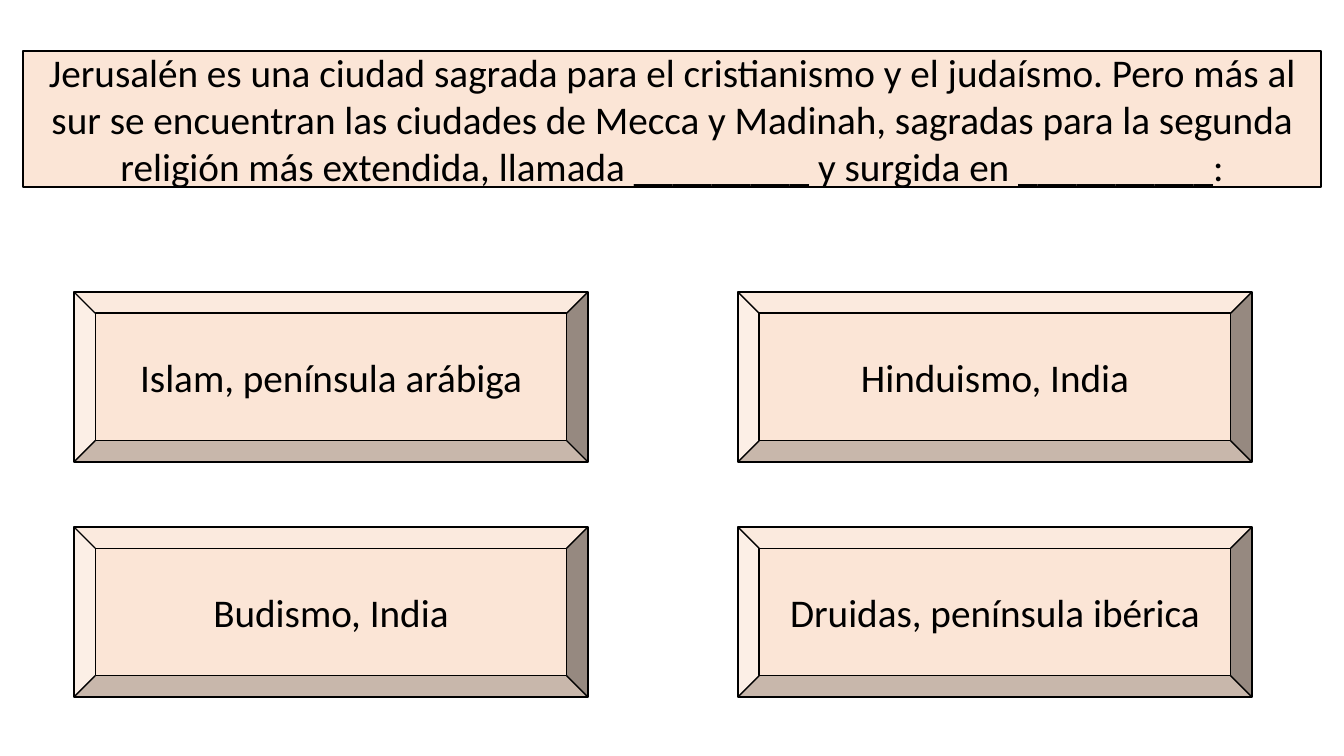
from dataclasses import dataclass

from pptx import Presentation
from pptx import util as u
from pptx.dml.color import RGBColor
from pptx.enum import shapes, text

SLIDE_WIDTH, SLIDE_HEIGHT = 1344, 756
EMU_PER_PX = u.Inches(1) / 100.8
TITLE_ONLY = 5

QUESTION = (
    "Jerusalén es una ciudad sagrada para el cristianismo y el judaísmo. "
    "Pero más al sur se encuentran las ciudades de Mecca y Madinah, "
    "sagradas para la segunda religión más extendida, "
    "llamada _________ y surgida en __________:"
)
ANSWERS = [
    "Islam, península arábiga",
    "Hinduismo, India",
    "Budismo, India",
    "Druidas, península ibérica",
]


@dataclass(frozen=True)
class Theme:
    fill: RGBColor = RGBColor(0xFB, 0xE5, 0xD6)
    ink: RGBColor = RGBColor(0, 0, 0)
    font: str = "Calibri"
    size: int = 28
    line: int = 1


THEME = Theme()


def px(length):
    return u.Emu(round(length * EMU_PER_PX))


def style_panel(shape, wording):
    """Gives a shape its outlined peach look and centred wording."""
    shape.fill.solid()
    shape.fill.fore_color.rgb = THEME.fill
    shape.line.color.rgb = THEME.ink
    shape.line.width = u.Pt(THEME.line)
    frame = shape.text_frame
    frame.text = wording
    frame.word_wrap = True
    frame.auto_size = text.MSO_AUTO_SIZE.NONE
    frame.vertical_anchor = text.MSO_ANCHOR.MIDDLE
    paragraph = frame.paragraphs[0]
    paragraph.alignment = text.PP_ALIGN.CENTER
    font = paragraph.runs[0].font
    font.name = THEME.font
    font.size = u.Pt(THEME.size)
    font.color.rgb = THEME.ink


def place_question(slide, left, top, width, height):
    title = slide.shapes.title
    title.left, title.top = px(left), px(top)
    title.width, title.height = px(width), px(height)
    style_panel(title, QUESTION)


def place_answers(slide, left, top, width, height):
    """Fills the box with a two-column grid of bevelled answer buttons."""
    columns = 2
    rows = len(ANSWERS) // columns
    button_width, button_height = 514, 170
    column_step = (width - button_width) / (columns - 1)
    row_step = (height - button_height) / (rows - 1)
    for index, answer in enumerate(ANSWERS):
        row, column = divmod(index, columns)
        button = slide.shapes.add_shape(
            shapes.MSO_SHAPE.BEVEL,
            px(left + column * column_step),
            px(top + row * row_step),
            px(button_width),
            px(button_height),
        )
        button.shadow.inherit = False
        style_panel(button, answer)


def main():
    presentation = Presentation()
    presentation.slide_width = px(SLIDE_WIDTH)
    presentation.slide_height = px(SLIDE_HEIGHT)
    slide = presentation.slides.add_slide(presentation.slide_layouts[TITLE_ONLY])
    place_question(slide, 23, 51, 1298, 136)
    place_answers(slide, 74, 292, 1178, 405)
    presentation.save("out.pptx")


if __name__ == "__main__":
    main()
